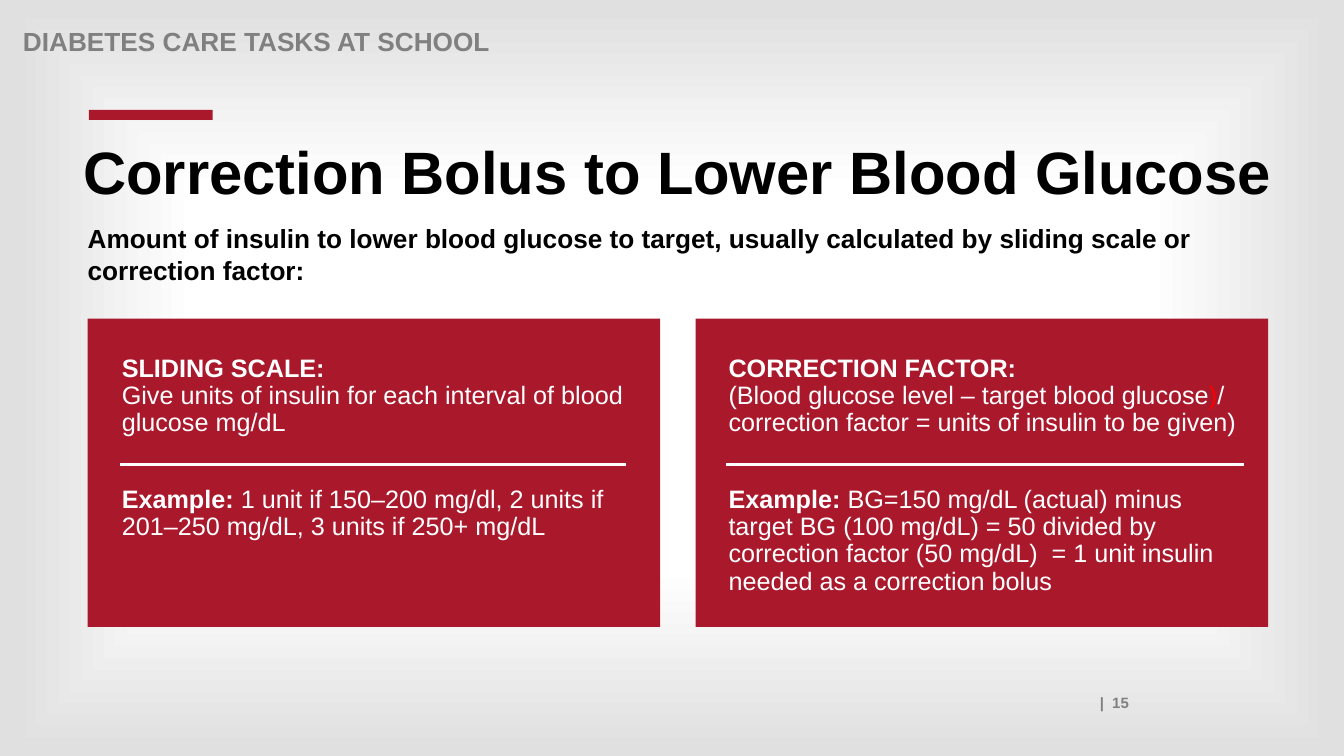
from dataclasses import dataclass

from lxml.etree import SubElement
from pptx import Presentation
from pptx.dml.color import RGBColor
from pptx.enum.shapes import MSO_CONNECTOR, MSO_SHAPE
from pptx.enum.text import MSO_ANCHOR, PP_ALIGN
from pptx.oxml.ns import qn
from pptx.util import Cm, Pt


@dataclass(frozen=True)
class Theme:
    font: str = "Arial"
    crimson: str = "AA182C"
    red: str = "FF0000"
    white: str = "FFFFFF"
    black: str = "000000"
    grey: str = "808080"
    edge: str = "E0E0E0"
    title: float = 42.7
    lead: float = 18.7
    body: float = 18
    footer: float = 10.7
    space_before: float = 13.3


def write_text(frame, runs, *, theme, size, color, align=PP_ALIGN.LEFT,
               line_spacing=0.9, space_before=None):
    """Write (text, bold, color) runs as one paragraph, breaking lines at newlines."""
    paragraph = frame.paragraphs[0]
    paragraph.alignment = align
    paragraph.line_spacing = line_spacing
    paragraph.space_before = Pt(theme.space_before if space_before is None else space_before)
    paragraph.font.size = Pt(size)
    for words, bold, run_color in runs:
        for index, line in enumerate(words.split("\n")):
            if index:
                paragraph.add_line_break()
            if line:
                run = paragraph.add_run()
                run.text = line
                run.font.name = theme.font
                run.font.size = Pt(size)
                run.font.bold = bold
                run.font.color.rgb = RGBColor.from_string(run_color or color)


class SlideBuilder:
    """Hold the theme and the current slide and add elements measured in centimetres."""

    def __init__(self, slide, theme):
        self.slide = slide
        self.theme = theme

    def glow_background(self, stops):
        """Fill the background with a gradient that spreads from the centre."""
        self.slide.background.fill.gradient()
        gradient = self.slide.element.find(".//" + qn("a:gradFill"))
        for child in list(gradient):
            gradient.remove(child)
        stop_list = SubElement(gradient, qn("a:gsLst"))
        for percent, color in stops:
            stop = SubElement(stop_list, qn("a:gs"), pos=str(percent * 1000))
            SubElement(stop, qn("a:srgbClr"), val=color)
        spread = SubElement(gradient, qn("a:path"), path="shape")
        SubElement(spread, qn("a:fillToRect"), l="50000", t="50000", r="50000", b="50000")

    def block(self, left, top, width, height):
        """Add a plain crimson rectangle."""
        panel = self.slide.shapes.add_shape(
            MSO_SHAPE.RECTANGLE, Cm(left), Cm(top), Cm(width), Cm(height))
        panel.shadow.inherit = False
        panel.fill.solid()
        panel.fill.fore_color.rgb = RGBColor.from_string(self.theme.crimson)
        panel.line.fill.background()

    def text(self, left, top, width, height, runs, inset=True, **style):
        """Add a wrapping text box."""
        frame = self.slide.shapes.add_textbox(
            Cm(left), Cm(top), Cm(width), Cm(height)).text_frame
        frame.word_wrap = True
        frame.vertical_anchor = MSO_ANCHOR.TOP
        if not inset:
            frame.margin_left = frame.margin_right = 0
            frame.margin_top = frame.margin_bottom = 0
        write_text(frame, runs, theme=self.theme, **style)

    def rule(self, start, end, y):
        """Add a horizontal white line."""
        divider = self.slide.shapes.add_connector(
            MSO_CONNECTOR.STRAIGHT, Cm(start), Cm(y), Cm(end), Cm(y))
        divider.line.color.rgb = RGBColor.from_string(self.theme.white)
        divider.line.width = Pt(2)
        SubElement(divider.element.spPr, qn("a:effectLst"))


def main():
    """Build the correction bolus slide."""
    theme = Theme()
    deck = Presentation()
    deck.slide_width, deck.slide_height = Cm(33.87), Cm(19.05)
    page = SlideBuilder(deck.slides.add_slide(deck.slide_layouts[6]), theme)

    page.glow_background([(12, theme.white), (50, theme.white), (98, theme.edge)])
    page.text(3.07, 17.35, 25.63, 0.71, [("|  15", True, None)], size=theme.footer,
              color=theme.grey, align=PP_ALIGN.RIGHT, line_spacing=1.0, space_before=0)
    page.text(0.33, 0.61, 27.94, 0.71, [("DIABETES CARE TASKS AT SCHOOL", True, None)],
              size=theme.lead, color=theme.grey)
    page.block(2.24, 2.77, 3.12, 0.25)
    page.text(2.21, 5.61, 28.02, 2.84,
              [("Amount of insulin to lower blood glucose to target, usually calculated "
                "by sliding scale or\ncorrection factor:", True, None)],
              inset=False, size=theme.lead, color=theme.black, line_spacing=1.0)
    page.text(1.85, 3.48, 30.86, 2.41,
              [("Correction Bolus to Lower Blood Glucose", True, None)],
              size=theme.title, color=theme.black)

    methods = [
        dict(card=2.21, text=2.82, widths=(13.39, 13.39), rule=(3.02, 15.77),
             method=[("SLIDING SCALE:\n", True, None),
                     ("Give units of insulin for each interval of blood glucose mg/dL",
                      False, None)],
             example="1 unit if 150–200 mg/dl, 2 units if 201–250 mg/dL, "
                     "3 units if 250+ mg/dL"),
        dict(card=17.53, text=18.11, widths=(13.84, 13.23), rule=(18.29, 31.34),
             method=[("CORRECTION FACTOR:\n", True, None),
                     ("(Blood glucose level – target blood glucose", False, None),
                     (")", False, theme.red),
                     ("/ correction factor = units of insulin to be given)", False, None)],
             example="BG=150 mg/dL (actual) minus target BG (100 mg/dL) = 50 divided by "
                     "correction factor (50 mg/dL)  = 1 unit insulin needed as a "
                     "correction bolus"),
    ]
    for item in methods:
        method_width, example_width = item["widths"]
        example = [("Example: ", True, None), (item["example"], False, None)]
        page.block(item["card"], 8.03, 14.43, 7.77)
        page.text(item["text"], 8.84, method_width, 3.35, item["method"],
                  size=theme.body, color=theme.white)
        page.text(item["text"], 12.14, example_width, 2.34, example,
                  size=theme.body, color=theme.white)
        page.rule(*item["rule"], 11.71)

    deck.save("out.pptx")


if __name__ == "__main__":
    main()
